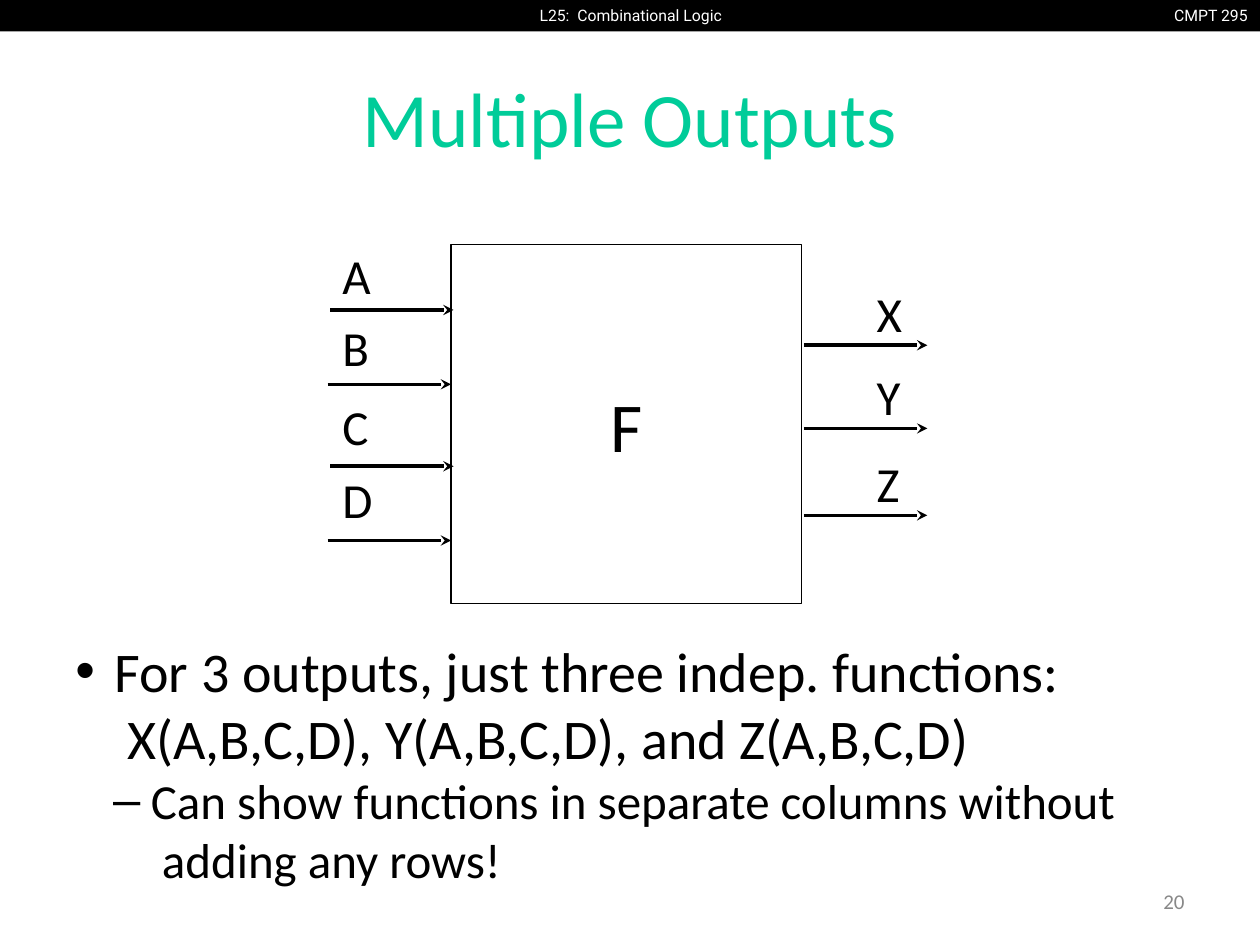
from lxml.etree import SubElement
from pptx import Presentation
from pptx.dml.color import RGBColor
from pptx.enum.shapes import MSO_CONNECTOR, MSO_SHAPE
from pptx.enum.text import MSO_ANCHOR, PP_ALIGN
from pptx.oxml.ns import qn
from pptx.util import Inches, Pt

BLACK = "000000"
WHITE = "FFFFFF"
GREEN = "00CC99"
GRAY = "888888"

# name, label top, arrow start, arrow height
INPUTS = [("A", 1.9, 2.62, 2.46), ("B", 2.47, 2.6, 3.05),
          ("C", 3.1, 2.62, 3.7), ("D", 3.68, 2.6, 4.29)]
OUTPUTS = [("X", 2.74), ("Y", 3.4), ("Z", 4.09)]
ARROW_LENGTH = 0.98


def color(hex_string):
    return RGBColor.from_string(hex_string)


def style(paragraph, size, hex_string, font="Calibri", align=PP_ALIGN.LEFT):
    paragraph.alignment = align
    paragraph.font.size = Pt(size)
    paragraph.font.name = font
    paragraph.font.color.rgb = color(hex_string)


def add_text(slide, box, text, size, hex_string=BLACK, font="Calibri",
             align=PP_ALIGN.LEFT, anchor=MSO_ANCHOR.TOP, wrap=True):
    frame = slide.shapes.add_textbox(*map(Inches, box)).text_frame
    frame.word_wrap = wrap
    frame.vertical_anchor = anchor
    frame.text = text
    style(frame.paragraphs[0], size, hex_string, font, align)


def add_rectangle(slide, box):
    rectangle = slide.shapes.add_shape(MSO_SHAPE.RECTANGLE, *map(Inches, box))
    rectangle.shadow.inherit = False
    return rectangle


def add_header(slide):
    bar = add_rectangle(slide, (0, 0, 10, 0.25))
    bar.fill.solid()
    bar.fill.fore_color.rgb = color(BLACK)
    bar.line.fill.background()
    add_text(slide, (9.19, 0, 0.81, 0.25), "CMPT 295", 9, WHITE, "Roboto",
             PP_ALIGN.RIGHT, wrap=False)
    add_text(slide, (3.96, 0, 2.09, 0.25), "L25:  Combinational Logic", 9,
             WHITE, "Roboto", PP_ALIGN.CENTER, wrap=False)


def add_function_block(slide):
    block = add_rectangle(slide, (3.58, 1.94, 2.78, 2.85))
    block.fill.background()
    block.line.color.rgb = color(BLACK)
    block.line.width = Pt(0.75)
    block.text_frame.vertical_anchor = MSO_ANCHOR.MIDDLE
    block.text_frame.text = "F"
    style(block.text_frame.paragraphs[0], 40, BLACK, align=PP_ALIGN.CENTER)


def add_signal(slide, name, label_left, label_top, start, height):
    """Draw a rightward arrow with its name above it."""
    arrow = slide.shapes.add_connector(
        MSO_CONNECTOR.STRAIGHT, Inches(start), Inches(height),
        Inches(start + ARROW_LENGTH), Inches(height))
    arrow.line.color.rgb = color(BLACK)
    arrow.line.width = Pt(2)
    SubElement(arrow.line._get_or_add_ln(), qn("a:tailEnd"), type="stealth")
    SubElement(arrow._element.spPr, qn("a:effectLst"))
    add_text(slide, (label_left, label_top, 0.43, 0.57), name, 28)


def add_bullet(paragraph, text, mark, size, margin, hang, level=0):
    paragraph.text = text
    paragraph.level = level
    properties = paragraph._p.get_or_add_pPr()
    properties.set("marL", str(Inches(margin)))
    properties.set("indent", str(-Inches(hang)))
    SubElement(properties, qn("a:buFont"), typeface="Arial")
    SubElement(properties, qn("a:buChar"), char=mark)
    style(paragraph, size, BLACK)


def add_explanation(slide):
    box = map(Inches, (0.5, 5, 9, 2.12))
    frame = slide.shapes.add_textbox(*box).text_frame
    frame.word_wrap = True
    add_bullet(frame.paragraphs[0],
               "For 3 outputs, just three indep. functions:"
               "\v X(A,B,C,D), Y(A,B,C,D), and Z(A,B,C,D)",
               "•", 32, 0.31, 0.31)
    add_bullet(frame.add_paragraph(),
               "Can show functions in separate columns without"
               "\v adding any rows!",
               "–", 28, 0.6, 0.3, level=1)


def main():
    presentation = Presentation()
    presentation.slide_width = Inches(10)
    presentation.slide_height = Inches(7.5)
    slide = presentation.slides.add_slide(presentation.slide_layouts[6])

    add_header(slide)
    add_text(slide, (0.5, 0.3, 9, 1.25), "Multiple Outputs", 44, GREEN,
             align=PP_ALIGN.CENTER, anchor=MSO_ANCHOR.MIDDLE)
    add_explanation(slide)
    add_function_block(slide)
    for name, label_top, start, height in INPUTS:
        add_signal(slide, name, 2.62, label_top, start, height)
    for name, height in OUTPUTS:
        add_signal(slide, name, 6.86, height - 0.54, 6.38, height)
    add_text(slide, (7.17, 6.95, 2.33, 0.4), "20", 12, GRAY,
             align=PP_ALIGN.RIGHT, anchor=MSO_ANCHOR.MIDDLE)

    presentation.save("out.pptx")


if __name__ == "__main__":
    main()
